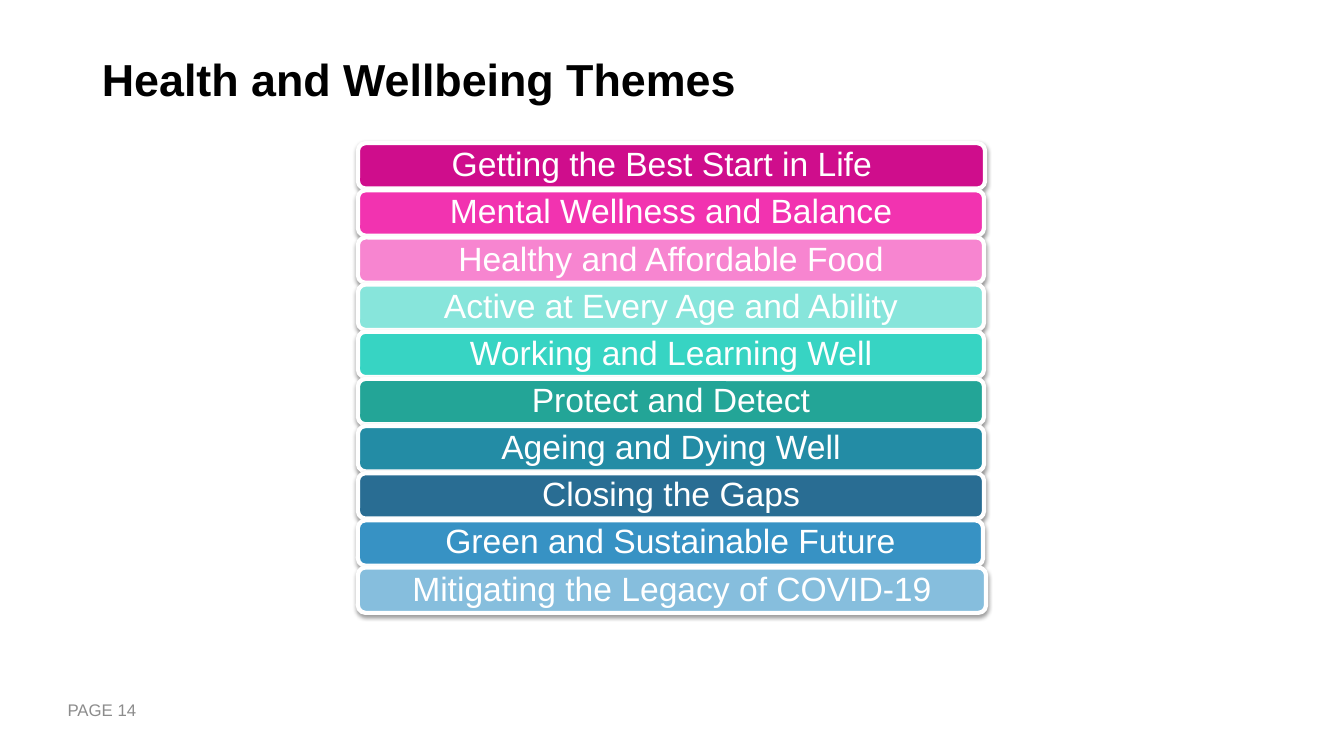
"""Build the Health and Wellbeing Themes slide."""
from lxml import etree
from pptx import Presentation
from pptx.dml.color import RGBColor
from pptx.enum import shapes, text
from pptx.oxml import ns
from pptx.util import Inches, Pt


def write(shape, words, size, color, margins, bold=False):
    frame = shape.text_frame
    frame.word_wrap = True
    frame.vertical_anchor = text.MSO_ANCHOR.MIDDLE
    frame.margin_left = frame.margin_right = Inches(margins[0])
    frame.margin_top = frame.margin_bottom = Inches(margins[1])
    frame.text = words
    para = frame.paragraphs[0]
    font = para.runs[0].font
    font.name, font.size, font.bold = "Arial", Pt(size), bold
    font.color.rgb = RGBColor.from_string(color)
    return para


def add_shadow(shape):
    shape.shadow.inherit = False
    effects = shape._element.spPr.find(ns.qn("a:effectLst"))
    shadow = etree.SubElement(effects, ns.qn("a:outerShdw"), blurRad=str(Pt(3.1)),
                              dist=str(Pt(1.6)), dir="5400000", rotWithShape="0")
    color = etree.SubElement(shadow, ns.qn("a:srgbClr"), val="000000")
    etree.SubElement(color, ns.qn("a:alpha"), val="38000")


deck = Presentation()
deck.slide_width, deck.slide_height = Inches(13.33), Inches(7.5)
page = deck.slides.add_slide(deck.slide_layouts[6])

title = page.shapes.add_textbox(Inches(0.92), Inches(0.05), Inches(11.5), Inches(1.45))
write(title, "Health and Wellbeing Themes", 32, "000000", (0.09, 0.04), bold=True)

page_number = page.shapes.add_textbox(Inches(0.54), Inches(6.84), Inches(3), Inches(0.4))
write(page_number, "PAGE 14", 12, "8C8C8C", (0.13, 0.07))

themes = [
    ("Getting the Best Start in Life", "CF0D8C", 6.22),
    ("Mental Wellness and Balance", "F233B0", 6.21),
    ("Healthy and Affordable Food", "F785D0", 6.21),
    ("Active at Every Age and Ability", "87E5DB", 6.21),
    ("Working and Learning Well", "37D4C3", 6.21),
    ("Protect and Detect", "23A597", 6.21),
    ("Ageing and Dying Well", "238CA5", 6.21),
    ("Closing the Gaps", "296D93", 6.21),
    ("Green and Sustainable Future", "3792C4", 6.2),
    ("Mitigating the Legacy of COVID-19", "86BEDD", 6.23),
]
first_top, last_top = 1.42, 5.63
pitch = (last_top - first_top) / (len(themes) - 1)
bars = []
for index, (theme, fill, width) in enumerate(themes):
    bar = page.shapes.add_shape(shapes.MSO_SHAPE.ROUNDED_RECTANGLE, Inches(3.55),
                                Inches(first_top + index * pitch), Inches(width), Inches(0.45))
    bar.fill.solid()
    bar.fill.fore_color.rgb = RGBColor.from_string(fill)
    bar.line.color.rgb = RGBColor.from_string("FFFFFF")
    bar.line.width = Pt(3)
    add_shadow(bar)
    para = write(bar, theme, 24, "FFFFFF", (0, 0))
    para.alignment = text.PP_ALIGN.CENTER
    para.line_spacing = 0.9
    bars.append(bar)
bars[0].text_frame.margin_right = Inches(0.19)

deck.save("out.pptx")
